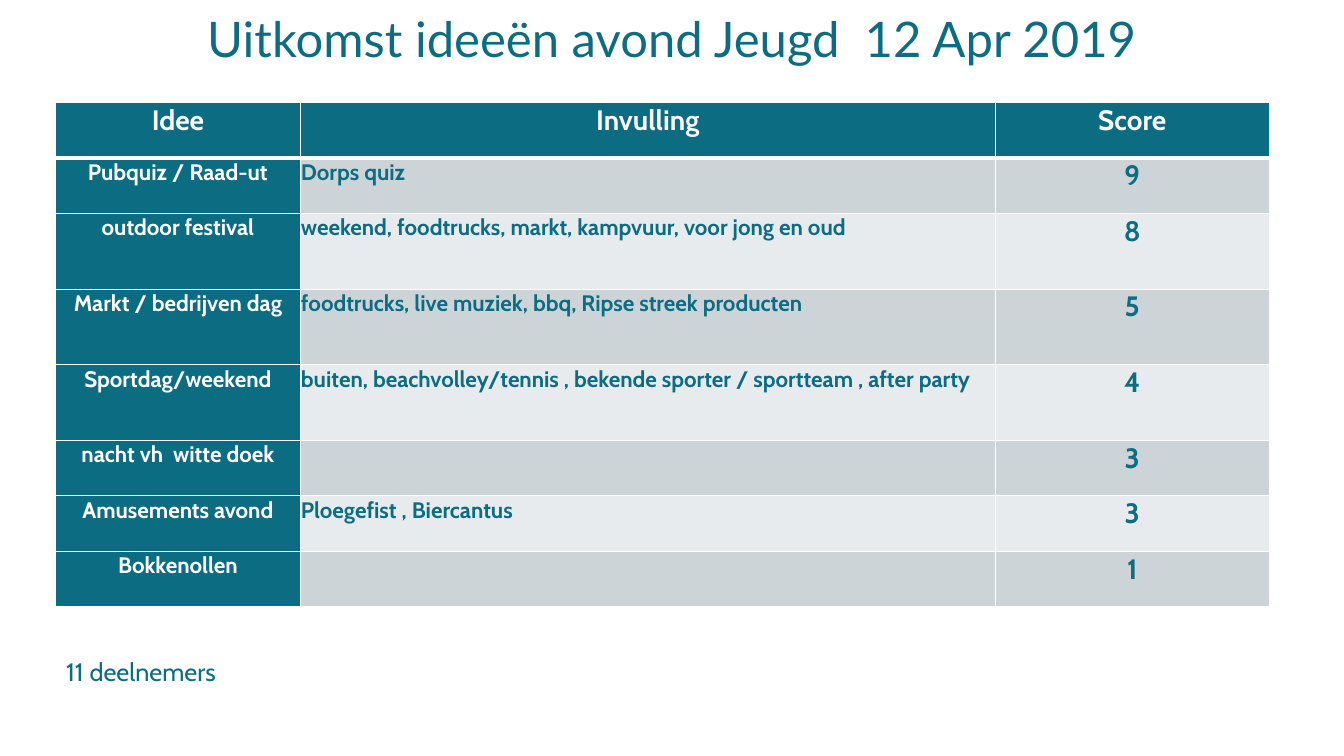
from dataclasses import dataclass

from lxml.etree import SubElement
from pptx import Presentation
from pptx.dml.color import RGBColor
from pptx.enum.text import MSO_ANCHOR, PP_ALIGN
from pptx.oxml.ns import qn
from pptx.slide import Slide
from pptx.table import _Cell
from pptx.text.text import TextFrame
from pptx.util import Pt

TEAL = RGBColor(0x0C, 0x6D, 0x82)
WHITE = RGBColor(0xFF, 0xFF, 0xFF)
DARK_BAND = RGBColor(0xCC, 0xD4, 0xD8)
LIGHT_BAND = RGBColor(0xE7, 0xEB, 0xED)

COLUMN_WIDTHS = (174.8, 496.4, 195.8)
HEADINGS = ("Idee", "Invulling", "Score")
HEADING_HEIGHT = 39.6


@dataclass(frozen=True)
class Idea:
    name: str
    details: str
    score: int
    height: float = 39.6


@dataclass(frozen=True)
class TextStyle:
    size: float
    color: RGBColor
    align: PP_ALIGN = PP_ALIGN.CENTER
    font: str = "Cabin"
    bold: bool = True


IDEAS = (
    Idea("Pubquiz / Raad-ut", "Dorps quiz", 9),
    Idea("outdoor festival", "weekend, foodtrucks, markt, kampvuur, voor jong en oud", 8, 54),
    Idea("Markt / bedrijven dag", "foodtrucks, live muziek, bbq, Ripse streek producten", 5, 54),
    Idea("Sportdag/weekend",
         "buiten, beachvolley/tennis , bekende sporter / sportteam , after party", 4, 54),
    Idea("nacht vh  witte doek", "", 3),
    Idea("Amusements avond", "Ploegefist , Biercantus", 3),
    Idea("Bokkenollen", "", 1),
)

TITLE_STYLE = TextStyle(35, TEAL, font="Lato", bold=False)
HEADING_STYLE = TextStyle(20, WHITE)
NAME_STYLE = TextStyle(16, WHITE)
DETAILS_STYLE = TextStyle(16, TEAL, PP_ALIGN.LEFT)
SCORE_STYLE = TextStyle(20, TEAL)
ATTENDANCE_STYLE = TextStyle(18, TEAL, PP_ALIGN.LEFT, bold=False)


def write_text(frame: TextFrame, text: str, style: TextStyle) -> None:
    frame.text = text
    paragraph = frame.paragraphs[0]
    paragraph.alignment = style.align
    for run in paragraph.runs:
        run.font.name = style.font
        run.font.size = Pt(style.size)
        run.font.bold = style.bold
        run.font.color.rgb = style.color


def add_borders(cell: _Cell, top: float, bottom: float) -> None:
    properties = cell._tc.get_or_add_tcPr()
    widths = {"a:lnL": 1, "a:lnR": 1, "a:lnT": top, "a:lnB": bottom}
    for side, width in widths.items():
        line = SubElement(properties, qn(side), w=str(Pt(width)))
        fill = SubElement(line, qn("a:solidFill"))
        SubElement(fill, qn("a:srgbClr"), val=str(WHITE))


def fill_cell(cell: _Cell, text: str, style: TextStyle, fill: RGBColor,
              top: float = 1, bottom: float = 1) -> None:
    add_borders(cell, top, bottom)
    cell.fill.solid()
    cell.fill.fore_color.rgb = fill
    cell.margin_left = cell.margin_right = cell.margin_top = Pt(0.5)
    cell.margin_bottom = Pt(0)
    write_text(cell.text_frame, text, style)


def add_title(slide: Slide) -> None:
    title = slide.shapes.add_textbox(Pt(66), Pt(5.8), Pt(828), Pt(47.5)).text_frame
    title.word_wrap = True
    title.vertical_anchor = MSO_ANCHOR.MIDDLE
    write_text(title, "Uitkomst ideeën avond Jeugd  12 Apr 2019", TITLE_STYLE)
    title.paragraphs[0].line_spacing = 0.9


def add_idea_table(slide: Slide) -> None:
    heights = (HEADING_HEIGHT, *(idea.height for idea in IDEAS))
    table = slide.shapes.add_table(
        len(heights), len(HEADINGS), Pt(39.7), Pt(73.4),
        Pt(sum(COLUMN_WIDTHS)), Pt(sum(heights)),
    ).table
    for column, width in zip(table.columns, COLUMN_WIDTHS):
        column.width = Pt(width)
    for row, height in zip(table.rows, heights):
        row.height = Pt(height)

    for position, heading in enumerate(HEADINGS):
        fill_cell(table.cell(0, position), heading, HEADING_STYLE, TEAL, bottom=3)
    for position, idea in enumerate(IDEAS, start=1):
        band = DARK_BAND if position % 2 else LIGHT_BAND
        top = 3 if position == 1 else 1
        fill_cell(table.cell(position, 0), idea.name, NAME_STYLE, TEAL, top)
        fill_cell(table.cell(position, 1), idea.details, DETAILS_STYLE, band, top)
        fill_cell(table.cell(position, 2), str(idea.score), SCORE_STYLE, band, top)


def add_attendance(slide: Slide) -> None:
    attendance = slide.shapes.add_textbox(Pt(40.1), Pt(465.1), Pt(132.5), Pt(28.8)).text_frame
    attendance.word_wrap = False
    write_text(attendance, "11 deelnemers", ATTENDANCE_STYLE)


def main() -> None:
    presentation = Presentation()
    presentation.slide_width = Pt(960)
    presentation.slide_height = Pt(540)
    slide = presentation.slides.add_slide(presentation.slide_layouts[6])
    add_title(slide)
    add_idea_table(slide)
    add_attendance(slide)
    presentation.save("out.pptx")


if __name__ == "__main__":
    main()
